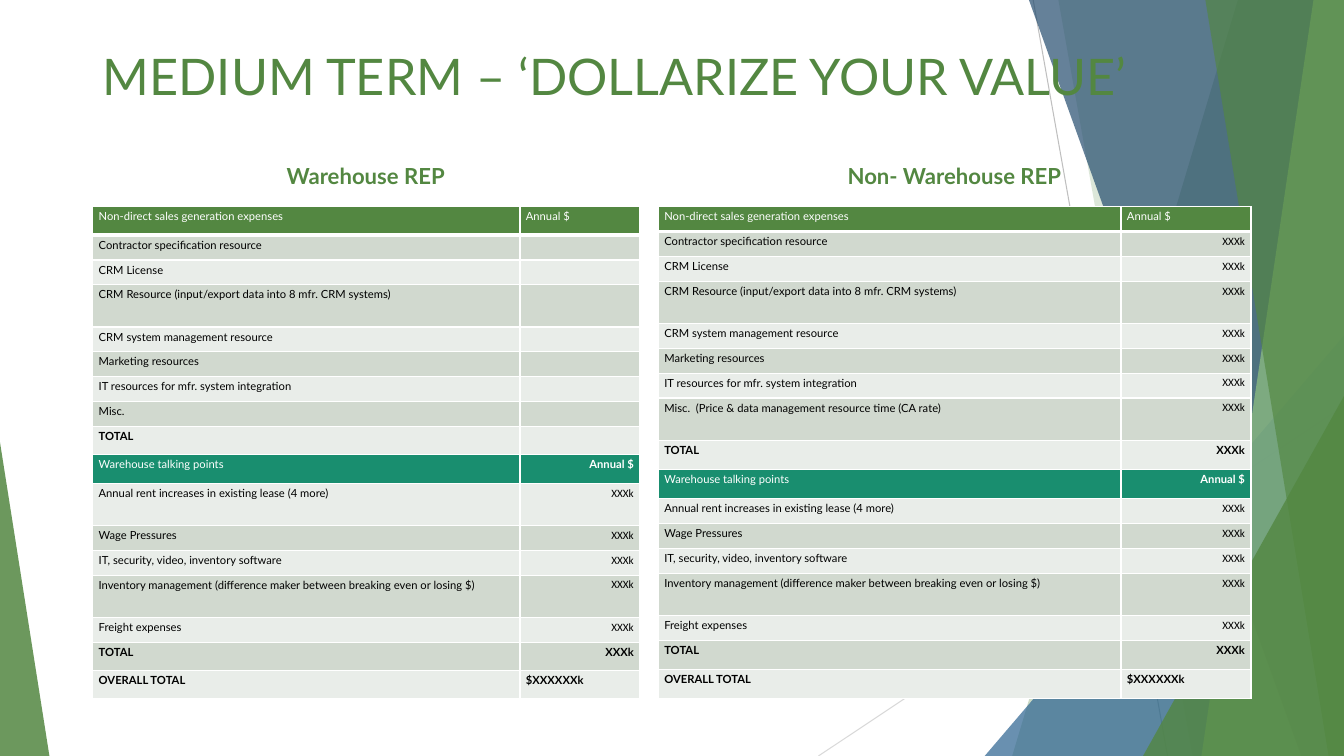
import pptx
import pptx.dml.color
import pptx.enum.shapes
import pptx.enum.text
import pptx.oxml
import pptx.oxml.ns
import pptx.util
from lxml import etree

Pt = pptx.util.Pt
qn = pptx.oxml.ns.qn
Align = pptx.enum.text.PP_ALIGN
Anchor = pptx.enum.text.MSO_ANCHOR

GREEN, TEAL, WHITE, BLACK = "538741", "198E6F", "FFFFFF", "000000"
BANDS = ["E9EDE9", "D1D9CF"]
WIDE, HIGH = 960, 540


def paint(color, code):
    color.rgb = pptx.dml.color.RGBColor.from_string(code)


def write(frame, text, size=8, font="Lato", color=BLACK, bold=False,
          align=Align.LEFT, anchor=Anchor.TOP, space=None):
    frame.word_wrap = True
    frame.vertical_anchor = anchor
    par = frame.paragraphs[0]
    par.alignment = align
    par.space_before = Pt(0)
    if space:
        par.line_spacing = space
    if not text:
        # An empty cell still needs a small font to keep its row low
        etree.SubElement(par._p, qn("a:endParaRPr"), sz=str(size * 100))
        return
    run = par.add_run()
    run.text = text
    run.font.size, run.font.name, run.font.bold = Pt(size), font, bold
    paint(run.font.color, color)


class Page:
    def __init__(self, deck):
        self.slide = deck.slides.add_slide(deck.slide_layouts[4])
        self.shapes = self.slide.shapes

    def line(self, x1, y1, x2, y2, color):
        line = self.shapes.add_connector(
            pptx.enum.shapes.MSO_CONNECTOR.STRAIGHT, Pt(x1), Pt(y1), Pt(x2), Pt(y2))
        line.line.width = Pt(0.75)
        paint(line.line.color, color)
        etree.SubElement(line._element.spPr, qn("a:effectLst"))

    def tint(self, shape, color, alpha):
        shape.shadow.inherit = False
        shape.line.fill.background()
        shape.fill.solid()
        paint(shape.fill.fore_color, color)
        tone = shape._element.spPr.find(qn("a:solidFill"))[0]
        etree.SubElement(tone, qn("a:alpha"), val=str(alpha * 1000))

    def shard(self, top, base, color, alpha):
        """Fill from a slanted edge to the right side of the slide."""
        pen = self.shapes.build_freeform(Pt(top), 0)
        pen.add_line_segments(
            [(Pt(WIDE), 0), (Pt(WIDE), Pt(HIGH)), (Pt(base), Pt(HIGH))], close=True)
        self.tint(pen.convert_to_shape(), color, alpha)

    def wedge(self, x, y, width, tip, color, alpha):
        """Triangle that stands on the bottom of the slide."""
        shape = self.shapes.add_shape(
            pptx.enum.shapes.MSO_SHAPE.ISOSCELES_TRIANGLE,
            Pt(x), Pt(y), Pt(width), Pt(HIGH - y))
        shape.adjustments[0] = tip
        self.tint(shape, color, alpha)

    def holder(self, index, x, y, width, height, text, **style):
        box = self.slide.placeholders[index]
        box.left, box.top, box.width, box.height = Pt(x), Pt(y), Pt(width), Pt(height)
        self.shapes._spTree.append(box._element)  # bring to the front
        box.text_frame.auto_size = pptx.enum.text.MSO_AUTO_SIZE.NONE
        write(box.text_frame, text, color=GREEN, **style)

    def drop(self, *marks):
        for mark in marks:
            item = self.slide.placeholders[mark]._element
            item.getparent().remove(item)

    def edge(self, cell, base):
        props = cell._tc.get_or_add_tcPr()
        for spot, (side, width) in enumerate(zip("LRTB", (1, 1, 1, base))):
            props.insert(spot, pptx.oxml.parse_xml(
                f'<a:ln{side} {pptx.oxml.ns.nsdecls("a")} w="{Pt(width)}"><a:solidFill>'
                f'<a:srgbClr val="{WHITE}"/></a:solidFill></a:ln{side}>'))

    def table(self, x, y, widths, heights, rows):
        grid = self.shapes.add_table(len(rows), len(widths), Pt(x), Pt(y),
                                     Pt(sum(widths)), Pt(sum(heights))).table
        grid.first_row = grid.horz_banding = False
        for col, width in zip(grid.columns, widths):
            col.width = Pt(width)
        for i, (row, height) in enumerate(zip(rows, heights)):
            grid.rows[i].height = Pt(height)
            fill = {0: GREEN, 9: TEAL}.get(i, BANDS[i % 2])
            color = WHITE if i in (0, 9) else BLACK
            for j, text in enumerate(row):
                cell = grid.cell(i, j)
                cell.margin_left = cell.margin_right = Pt(4.3)
                cell.margin_top = cell.margin_bottom = Pt(2.2)
                cell.fill.solid()
                paint(cell.fill.fore_color, fill)
                self.edge(cell, 3 if i == 0 else 1)
                bold = "TOTAL" in row[0] or (i == 9 and j == 1)
                right = j == 1 and 0 < i < len(rows) - 1
                write(cell.text_frame, text, color=color, bold=bold,
                      font="Calibri" if text == "XXXk" and not bold else "Lato",
                      align=Align.RIGHT if right else Align.LEFT, anchor=Anchor.TOP)


def costs(misc, value):
    """Rows of one table: sales expenses, then warehouse points."""
    sales = ["Contractor specification resource", "CRM License",
             "CRM Resource (input/export data into 8 mfr. CRM systems)",
             "CRM system management resource", "Marketing resources",
             "IT resources for mfr. system integration", misc, "TOTAL"]
    points = ["Annual rent increases in existing lease (4 more)", "Wage Pressures",
              "IT, security, video, inventory software",
              "Inventory management (difference maker between breaking even or losing $)",
              "Freight expenses", "TOTAL"]
    return ([("Non-direct sales generation expenses", "Annual $")]
            + [(name, value) for name in sales]
            + [("Warehouse talking points", "Annual $")]
            + [(name, "XXXk") for name in points]
            + [("OVERALL TOTAL", "$XXXXXXk")])


def sizes(tall, total, totals):
    """Row heights: plain rows, rows of double height and total rows."""
    return [30.1 if i in tall else total if i in totals else 17.8 for i in range(17)]


def main():
    deck = pptx.Presentation()
    deck.slide_width, deck.slide_height = Pt(WIDE), Pt(HIGH)
    page = Page(deck)
    page.drop(2, 4)

    # Backdrop
    page.line(738, 0, 834, HIGH, "BFBFBF")
    page.line(WIDE, 290, 584.6, HIGH, "D9D9D9")
    page.shard(884.2, 723, GREEN, 30)
    page.shard(756, 851.8, GREEN, 20)
    page.wedge(703.4, 239.8, 256.6, 1, "306692", 72)
    page.shard(735, 929.5, "244C6E", 70)
    page.shard(938.2, 858.2, "92C381", 70)
    page.shard(861, 949, GREEN, 65)
    page.wedge(816.5, 283, 143.5, 1, GREEN, 80)
    page.wedge(0, 316, 35.3, 0, GREEN, 85)

    # Title
    page.holder(0, 66.2, 28.8, 828, 76.3, "MEDIUM TERM – ‘DOLLARIZE YOUR VALUE’", size=36)

    # Both tables with their headings
    head = dict(size=15.8, bold=True, align=Align.CENTER)
    page.table(66.2, 147.6, (305.2, 85.7), sizes((3, 10, 13), 20.3, (0, 8, 9, 15, 16)),
               costs("Misc.", ""))
    page.holder(1, 147.6, 112.3, 227.5, 28.1, "Warehouse REP",
                anchor=Anchor.MIDDLE, space=0.9, **head)
    page.table(470.2, 147.6, (330.5, 92.9), sizes((3, 7, 13), 20.9, (8, 9, 15, 16)),
               costs("Misc.  (Price & data management resource time (CA rate)", "XXXk"))
    page.holder(3, 568.1, 112.3, 227.5, 28.1, "Non- Warehouse REP", **head)

    deck.save("out.pptx")


if __name__ == "__main__":
    main()
